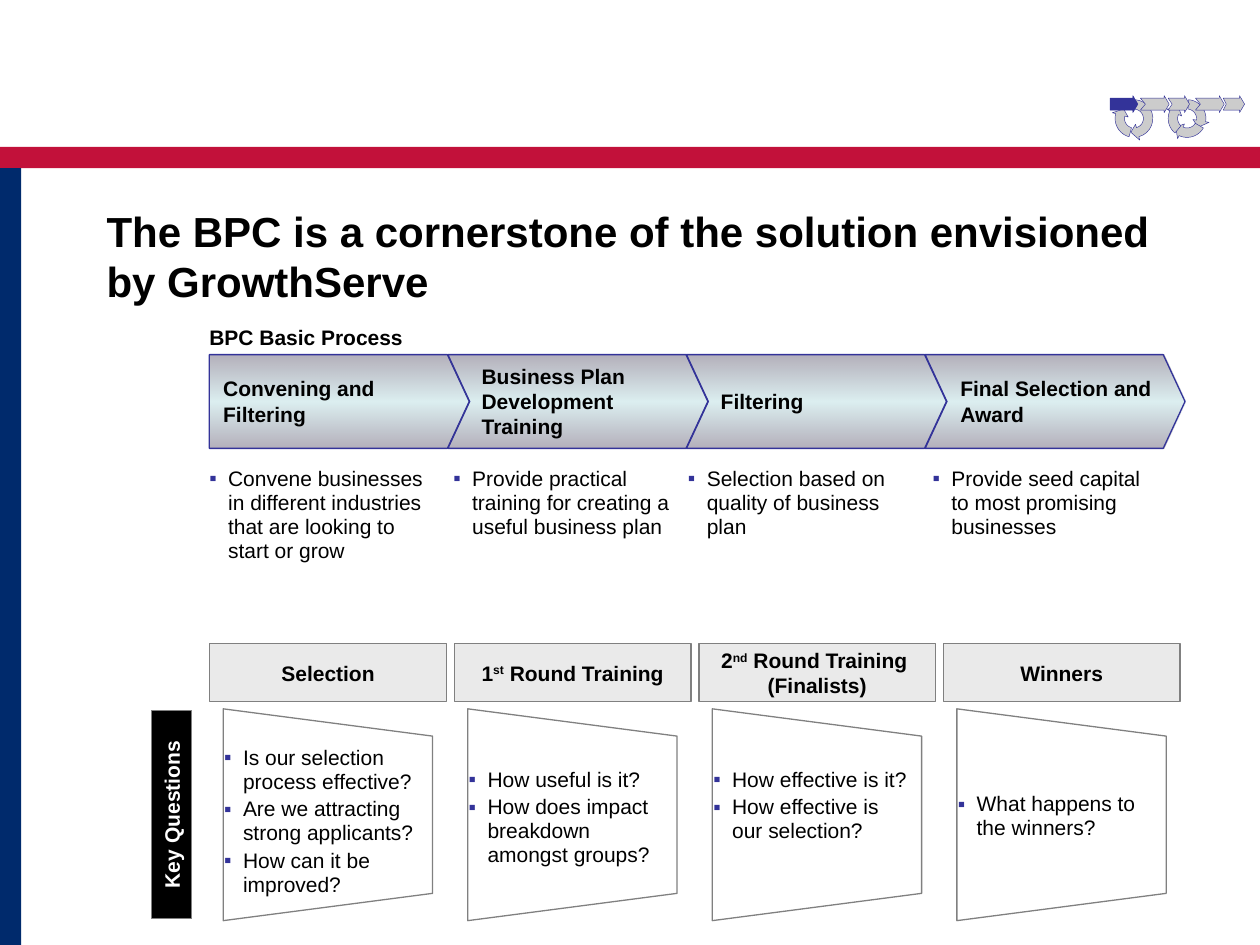
from math import cos, radians, sin

from lxml import etree
from pptx import Presentation
from pptx.dml.color import RGBColor
from pptx.enum.shapes import MSO_SHAPE
from pptx.enum.text import MSO_ANCHOR, PP_ALIGN
from pptx.oxml import parse_xml
from pptx.oxml.ns import qn
from pptx.util import Cm, Pt

RECT = MSO_SHAPE.RECTANGLE
TOP, MIDDLE = MSO_ANCHOR.TOP, MSO_ANCHOR.MIDDLE
LEFT, CENTER = PP_ALIGN.LEFT, PP_ALIGN.CENTER
A_NS = "http://schemas.openxmlformats.org/drawingml/2006/main"

# Content
TITLE = "The BPC is a cornerstone of the solution envisioned by GrowthServe"
PROCESS_HEADING = "BPC Basic Process"
QUESTIONS_LABEL = "Key Questions"
# step, label left, what happens, its left (cm)
STEPS = [
    ("Convening and Filtering", 4.37,
     "Convene businesses in different industries that are looking to start or grow", 4.22),
    ("Business Plan Development Training", 9.58,
     "Provide practical training for creating a useful business plan", 9.14),
    ("Filtering", 14.4, "Selection based on quality of business plan", 13.87),
    ("Final Selection and Award", 19.23,
     "Provide seed capital to most promising businesses", 18.8),
]
# heading lines (a tuple holds runs, "^" marks superscript), questions, their top (cm)
ROUNDS = [
    (["Selection"], ["Is our selection process effective?",
                     "Are we attracting strong applicants?",
                     "How can it be improved?"], 15.04),
    ([("1", "^st", " Round Training")],
     ["How useful is it?", "How does impact breakdown amongst groups?"], 15.49),
    ([("2", "^nd", " Round Training "), "(Finalists)"],
     ["How effective is it?", "How effective is our selection?"], 15.49),
    (["Winners"], ["What happens to the winners?"], 15.98),
]
# Process tracker: left, width, notch (cm)
TRACKER_STEPS = [(22.38, 0.56, 0), (22.99, 0.58, 0.1), (23.55, 0.43, 0.08),
                 (24.1, 0.58, 0.1), (24.66, 0.43, 0.06)]
# Ring centre x, then start and end angle of each arrow, clockwise
TRACKER_RINGS = [(22.86, [(-85, 75), (105, 195)]),
                 (23.93, [(-85, 10), (30, 115), (130, 205)])]

THEME = {
    "font": "Arial", "title": 24, "body": 12,
    "text": "000000", "inverse": "FFFFFF", "accent": "333399",
    "red": "C2113A", "navy": "002A6C", "panel": "EAEAEA", "edge": "808080",
    "tracker": "CCCCCC", "chevron": [(0, "675F76"), (50, "BBE0E3"), (100, "675F76")],
}

prs = Presentation()
prs.slide_width, prs.slide_height = Cm(25.4), Cm(19.05)
slide = prs.slides.add_slide(prs.slide_layouts[6])
shapes = slide.shapes


def color(key):
    return RGBColor.from_string(THEME[key])


def write(shape, lines, size="body", ink="text", bold=False, align=LEFT,
          anchor=TOP, insets=(0, 0), wrap=True, bullets=False):
    """Fill a shape with one paragraph for each line."""
    frame = shape.text_frame
    frame.word_wrap, frame.vertical_anchor = wrap, anchor
    frame.margin_left = frame.margin_right = Cm(insets[0])
    frame.margin_top = frame.margin_bottom = Cm(insets[1])
    for i, line in enumerate(lines):
        para = frame.paragraphs[0] if i == 0 else frame.add_paragraph()
        para.alignment = align
        for part in (line if isinstance(line, tuple) else (line,)):
            run = para.add_run()
            run.text = part.lstrip("^")
            run.font.name, run.font.size = THEME["font"], Pt(THEME[size])
            run.font.bold, run.font.color.rgb = bold, color(ink)
            if part.startswith("^"):
                run.font._element.set("baseline", "30000")
        if bullets:
            para.line_spacing, para.space_after = 0.95, Pt(2)
            props = para._p.get_or_add_pPr()
            props.set("marL", str(Cm(0.38)))
            props.set("indent", str(-Cm(0.38)))
            tint = etree.SubElement(props, qn("a:buClr"))
            etree.SubElement(tint, qn("a:srgbClr"), val=THEME["accent"])
            etree.SubElement(props, qn("a:buFont"), typeface=THEME["font"])
            etree.SubElement(props, qn("a:buChar"), char="▪")


def add_text(left, top, width, height, lines, **formatting):
    box = shapes.add_textbox(Cm(left), Cm(top), Cm(width), Cm(height))
    write(box, lines, **formatting)


def paint(shape, fill=None, line=None, weight=0.75):
    shape.shadow.inherit = False
    if fill:
        shape.fill.solid()
        shape.fill.fore_color.rgb = color(fill)
    else:
        shape.fill.background()
    if line:
        shape.line.color.rgb, shape.line.width = color(line), Pt(weight)
    else:
        shape.line.fill.background()
    return shape


def add_rect(left, top, width, height, **paints):
    return paint(shapes.add_shape(RECT, Cm(left), Cm(top), Cm(width), Cm(height)), **paints)


def add_polygon(points, **paints):
    start, *rest = [(Cm(x), Cm(y)) for x, y in points]
    builder = shapes.build_freeform(*start)
    builder.add_line_segments(rest, close=True)
    return paint(builder.convert_to_shape(), **paints)


def arrow(left, top, width, height, tip, notch=0, shoulder=0):
    """Outline of a right-pointing arrow, with an optional notched tail."""
    neck, bottom, middle = left + width - tip, top + height, top + height / 2
    return [(left, top + shoulder), (neck, top + shoulder), (neck, top),
            (left + width, middle), (neck, bottom), (neck, bottom - shoulder),
            (left, bottom - shoulder), (left + notch, middle)]


def ring_arrow(cx, cy, outer, inner, start, end, head=28, overhang=0.07):
    """Outline of a curved arrow running clockwise around a centre."""
    def at(radius, angle):
        return cx + radius * cos(radians(angle)), cy + radius * sin(radians(angle))
    sweep = [start + (end - start) * i / 12 for i in range(13)]
    return ([at(outer, a) for a in sweep]
            + [at(outer + overhang, end), at((outer + inner) / 2, end + head),
               at(inner - overhang, end)]
            + [at(inner, a) for a in reversed(sweep)])


def fill_gradient(shape, stops):
    stop_xml = "".join(
        f'<a:gs pos="{pos * 1000}"><a:srgbClr val="{rgb}"><a:alpha val="50000"/></a:srgbClr></a:gs>'
        for pos, rgb in stops)
    blank = shape._element.spPr.find(qn("a:noFill"))
    blank.getparent().replace(blank, parse_xml(
        f'<a:gradFill xmlns:a="{A_NS}"><a:gsLst>{stop_xml}</a:gsLst>'
        '<a:lin ang="5400000" scaled="0"/></a:gradFill>'))


# Frame bars and title
add_rect(0, 2.96, 25.4, 0.43, fill="red")
add_rect(0, 3.39, 0.43, 15.66, fill="navy")
add_text(1.9, 4.01, 21.6, 1.7, [TITLE], size="title", bold=True, insets=(0.25, 0.13))

# Process chevrons with their descriptions
add_text(4.22, 6.55, 4.52, 0.51, [PROCESS_HEADING], bold=True)
for i, (step, label_left, detail, detail_left) in enumerate(STEPS):
    chevron = add_polygon(arrow(4.22 + 4.81 * i, 7.15, 5.24, 1.89, 0.44, 0.44 if i else 0),
                          line="accent")
    fill_gradient(chevron, THEME["chevron"])
    add_text(label_left, 7.27, 4.24 if i else 4.67, 1.63, [step],
             bold=True, anchor=MIDDLE, insets=(0.13, 0))
    add_text(detail_left, 9.42, 4.55, 1.96, [detail], bullets=True)

# Rounds with their key questions
for i, (heading, questions, questions_top) in enumerate(ROUNDS):
    shift = 4.93 * i
    header = add_rect(4.23 + shift, 12.98, 4.77, 1.17, fill="panel", line="edge")
    write(header, heading, bold=True, align=CENTER, anchor=MIDDLE,
          insets=(0.25, 0.13), wrap=False)
    near, far = 4.5 + shift, 8.72 + shift
    add_polygon([(near, 14.29), (far, 14.84), (far, 18.01), (near, 18.56)], line="edge")
    add_text(4.52 + shift, questions_top, 3.96, 3, questions, bullets=True)

label = add_rect(1.36, 16.02, 4.2, 0.8, fill="text", line="edge")
label.rotation = 270
write(label, [QUESTIONS_LABEL], ink="inverse", bold=True, align=CENTER,
      anchor=MIDDLE, insets=(0.25, 0.13), wrap=False)

# Process tracker, first step highlighted
for center, sweeps in TRACKER_RINGS:
    for start, end in sweeps:
        add_polygon(ring_arrow(center, 2.39, 0.38, 0.19, start, end),
                    fill="tracker", line="accent", weight=0.25)
for i, (left, width, notch) in enumerate(TRACKER_STEPS):
    add_polygon(arrow(left, 1.93, width, 0.34, 0.1, notch, 0.05),
                fill="tracker" if i else "accent", line="accent", weight=0.25)

prs.save("out.pptx")
